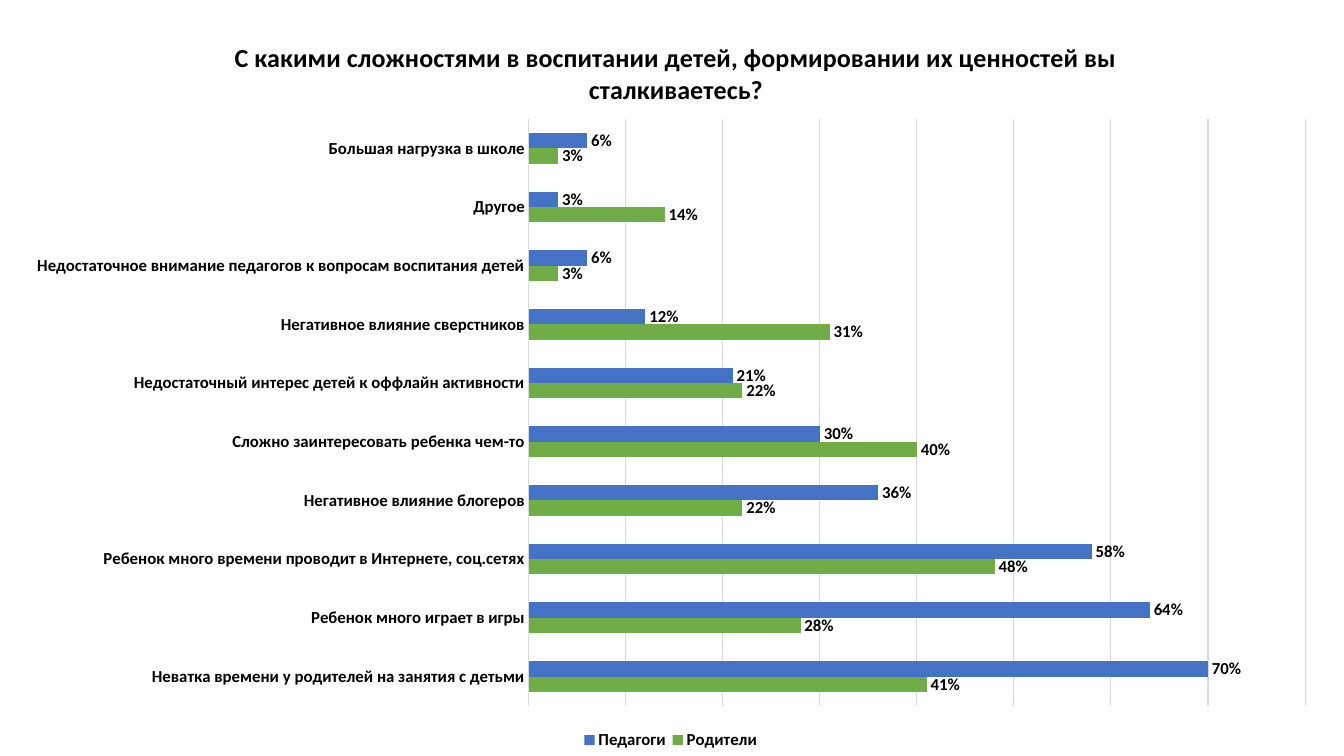
from lxml import etree
from pptx import Presentation
from pptx.chart.data import CategoryChartData
from pptx.dml.color import RGBColor
from pptx.enum import chart as kinds
from pptx.oxml import ns
from pptx.util import Pt

FONT = "Calibri"
BLACK, GREY = "000000", "D9D9D9"
SURVEY_WIDTH, SURVEY_HEIGHT = 943.2, 533.5
QUESTION = "С какими сложностями в воспитании детей, формировании их ценностей вы сталкиваетесь?"
ANSWERS = [
    ("Неватка времени у родителей на занятия с детьми", 0.41, 0.7),
    ("Ребенок много играет в игры", 0.28, 0.64),
    ("Ребенок много времени проводит в Интернете, соц.сетях", 0.48, 0.58),
    ("Негативное влияние блогеров", 0.22, 0.36),
    ("Сложно заинтересовать ребенка чем-то", 0.4, 0.3),
    ("Недостаточный интерес детей к оффлайн активности", 0.22, 0.21),
    ("Негативное влияние сверстников", 0.31, 0.12),
    ("Недостаточное внимание педагогов к вопросам воспитания детей", 0.03, 0.06),
    ("Другое", 0.14, 0.03),
    ("Большая нагрузка в школе", 0.03, 0.06),
]
GROUPS = [("Родители", "70AD47"), ("Педагоги", "4472C4")]


def rgb(value):
    return RGBColor.from_string(value)


def style_font(font, size=12, bold=True, color=BLACK):
    font.name = FONT
    font.size = Pt(size)
    font.bold = bold
    font.color.rgb = rgb(color)


def write_text(frame, content, **style):
    frame.text = content
    style_font(frame.paragraphs[0].runs[0].font, **style)


def style_line(line, color=GREY, width=0.75):
    line.color.rgb = rgb(color)
    line.width = Pt(width)


def place(part, followers, left, top, width=None, height=None, inner=False):
    for old in part.findall(ns.qn("c:layout")):
        part.remove(old)
    layout = etree.Element(ns.qn("c:layout"))
    manual = etree.SubElement(layout, ns.qn("c:manualLayout"))
    settings = [("layoutTarget", "inner")] if inner else []
    settings += [("xMode", "edge"), ("yMode", "edge")]
    settings += [("x", left / SURVEY_WIDTH), ("y", top / SURVEY_HEIGHT)]
    if width:
        settings += [("w", width / SURVEY_WIDTH), ("h", height / SURVEY_HEIGHT)]
    for tag, value in settings:
        etree.SubElement(manual, ns.qn(f"c:{tag}")).set("val", str(value))
    following = next(child for child in part if child.tag in map(ns.qn, followers))
    following.addprevious(layout)


def add_survey(slide):
    data = CategoryChartData(number_format="0%")
    data.categories = [answer[0] for answer in ANSWERS]
    for column, (group, _) in enumerate(GROUPS, 1):
        data.add_series(group, [answer[column] for answer in ANSWERS])
    survey = slide.shapes.add_chart(
        kinds.XL_CHART_TYPE.BAR_CLUSTERED, Pt(8.64), Pt(6.48),
        Pt(SURVEY_WIDTH), Pt(SURVEY_HEIGHT), data).chart
    style_font(survey.font, size=10, bold=False)
    return survey


def format_bars(survey):
    bars = survey.plots[0]
    bars.gap_width = 182
    bars.overlap = 0
    bars.vary_by_categories = False
    for series, (_, color) in zip(bars.series, GROUPS):
        series.format.fill.solid()
        series.format.fill.fore_color.rgb = rgb(color)
        labels = series.data_labels
        labels.show_value = True
        labels.number_format = "0%"
        labels.number_format_is_linked = False
        labels.position = kinds.XL_LABEL_POSITION.OUTSIDE_END
        style_font(labels.font)


def format_axes(survey):
    answers = survey.category_axis
    answers.major_tick_mark = kinds.XL_TICK_MARK.NONE
    answers.minor_tick_mark = kinds.XL_TICK_MARK.NONE
    style_font(answers.tick_labels.font)
    style_line(answers.format.line)
    shares = survey.value_axis
    shares.minimum_scale, shares.maximum_scale, shares.major_unit = 0, 0.8, 0.1
    shares.has_major_gridlines = True
    style_line(shares.major_gridlines.format.line)
    shares.tick_labels.number_format = "0%"
    shares.tick_labels.number_format_is_linked = False
    shares.visible = False


def format_legend(survey):
    survey.has_legend = True
    legend = survey.legend
    legend.position = kinds.XL_LEGEND_POSITION.BOTTOM
    legend.include_in_layout = False
    style_font(legend.font)


def main():
    deck = Presentation()
    deck.slide_width, deck.slide_height = Pt(960), Pt(540)
    survey = add_survey(deck.slides.add_slide(deck.slide_layouts[6]))
    survey.has_title = True
    write_text(survey.chart_title.text_frame, QUESTION, size=18.6)
    survey.chart_title.include_in_layout = False
    format_bars(survey)
    format_axes(survey)
    format_legend(survey)
    content = survey.element.chart
    place(content.find(ns.qn("c:title")), ["c:overlay"], 155.5, 18)
    place(content.plotArea, ["c:barChart"], 369.2, 78.5, 554.4, 419.3, inner=True)
    place(content.find(ns.qn("c:legend")), ["c:overlay"], 404, 514, 133, 19)
    deck.save("out.pptx")


if __name__ == "__main__":
    main()
